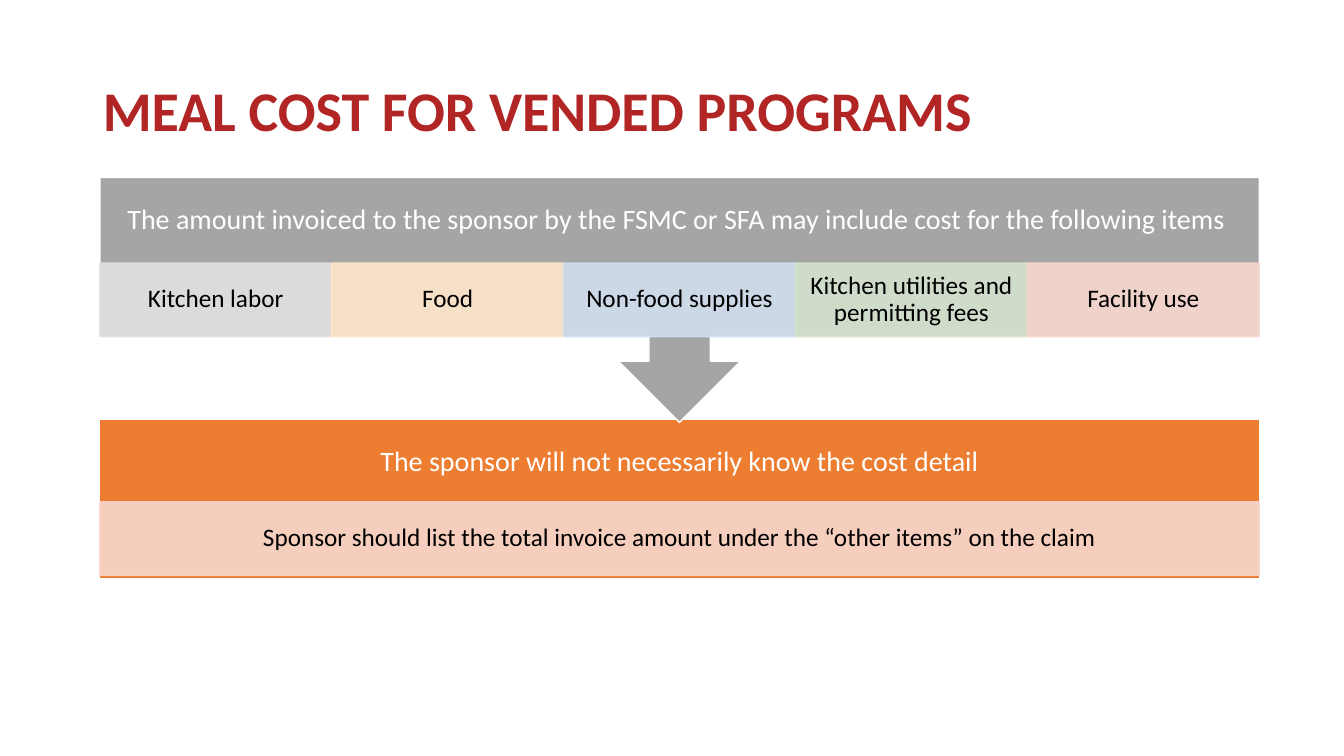
import pptx
import pptx.util
import pptx.dml.color
import pptx.enum.shapes
import pptx.enum.text
import pptx.oxml

HEADING = "MEAL COST FOR VENDED PROGRAMS"
INVOICE = "The amount invoiced to the sponsor by the FSMC or SFA may include cost for the following items "
COST_ITEMS = [
    ("Kitchen labor", "E1E1E1"),
    ("Food", "FFE8CC"),
    ("Non-food supplies", "D2DEEF"),
    ("Kitchen utilities and permitting fees", "D5E3CF"),
    ("Facility use", "F8D7CE"),
]
DETAIL = "The sponsor will not necessarily know the cost detail"
ADVICE = ("Sponsor should list the total invoice amount under the “other items” on the claim", "F8D7CE")

THEME = {
    "font": "Calibri",
    "heading": "B12524",
    "white": "FFFFFF",
    "black": "000000",
    "invoice": "A5A5A5",
    "detail": "ED7D31",
    "heading_size": 40,
    "band_size": 20,
    "item_size": 18,
    "item_alpha": 90,
}

LEFT, WIDTH = 0.99, 11.5
INVOICE_TOP, INVOICE_HEIGHT = 1.76, 2.43
DETAIL_TOP, DETAIL_HEIGHT = 4.16, 1.58
BAND_HEIGHT, ITEM_HEIGHT = 0.85, 0.73
ADVICE_TOP = 4.98

Inches = pptx.util.Inches
SHAPES = pptx.enum.shapes.MSO_SHAPE


def rgb(color):
    return pptx.dml.color.RGBColor.from_string(color)


def write(frame, text, size, color, margins, centered=True, bold=False):
    frame.text = text
    frame.word_wrap = True
    frame.vertical_anchor = pptx.enum.text.MSO_ANCHOR.MIDDLE
    frame.margin_left = frame.margin_right = Inches(margins[0])
    frame.margin_top = frame.margin_bottom = Inches(margins[1])
    paragraph = frame.paragraphs[0]
    paragraph.line_spacing = 0.9
    paragraph.alignment = pptx.enum.text.PP_ALIGN.CENTER if centered else pptx.enum.text.PP_ALIGN.LEFT
    font = paragraph.runs[0].font
    font.name = THEME["font"]
    font.size = pptx.util.Pt(size)
    font.bold = bold
    font.color.rgb = rgb(color)


def add_block(slide, kind, box, fill, line):
    block = slide.shapes.add_shape(kind, *map(Inches, box))
    block.shadow.inherit = False
    block.fill.solid()
    block.fill.fore_color.rgb = rgb(fill)
    block.line.color.rgb = rgb(line)
    block.line.width = pptx.util.Pt(1)
    return block


def add_band_text(slide, text, top):
    band = slide.shapes.add_textbox(*map(Inches, (LEFT, top, WIDTH, BAND_HEIGHT)))
    write(band.text_frame, text, THEME["band_size"], THEME["white"], (0.16, 0.16))


def add_item(slide, text, color, left, top, width):
    item = add_block(slide, SHAPES.RECTANGLE, (left, top, width, ITEM_HEIGHT), color, color)
    for tint in item._element.spPr.iter(pptx.oxml.ns.qn("a:srgbClr")):
        alpha = tint.makeelement(pptx.oxml.ns.qn("a:alpha"), {"val": str(THEME["item_alpha"] * 1000)})
        tint.append(alpha)
    write(item.text_frame, text, THEME["item_size"], THEME["black"], (0.14, 0.03))


def main():
    deck = pptx.Presentation()
    deck.slide_width, deck.slide_height = Inches(13.33), Inches(7.5)
    slide = deck.slides.add_slide(deck.slide_layouts[5])

    heading = slide.shapes.title
    heading.left, heading.top, heading.width, heading.height = map(Inches, (0.92, 0.4, 11.5, 1.45))
    write(heading.text_frame, HEADING, THEME["heading_size"], THEME["heading"], (0.1, 0.05), False, True)

    add_block(slide, SHAPES.RECTANGLE, (LEFT, DETAIL_TOP, WIDTH, DETAIL_HEIGHT), THEME["detail"], THEME["white"])
    add_band_text(slide, DETAIL, DETAIL_TOP)
    add_item(slide, *ADVICE, LEFT, ADVICE_TOP, WIDTH)

    invoice = add_block(slide, SHAPES.UP_ARROW_CALLOUT, (LEFT, INVOICE_TOP, WIDTH, INVOICE_HEIGHT),
                        THEME["invoice"], THEME["white"])
    invoice.rotation = 180
    add_band_text(slide, INVOICE, INVOICE_TOP)

    item_width = WIDTH / len(COST_ITEMS)
    for index, (text, color) in enumerate(COST_ITEMS):
        add_item(slide, text, color, LEFT + index * item_width, INVOICE_TOP + BAND_HEIGHT, item_width)

    deck.save("out.pptx")


if __name__ == "__main__":
    main()
